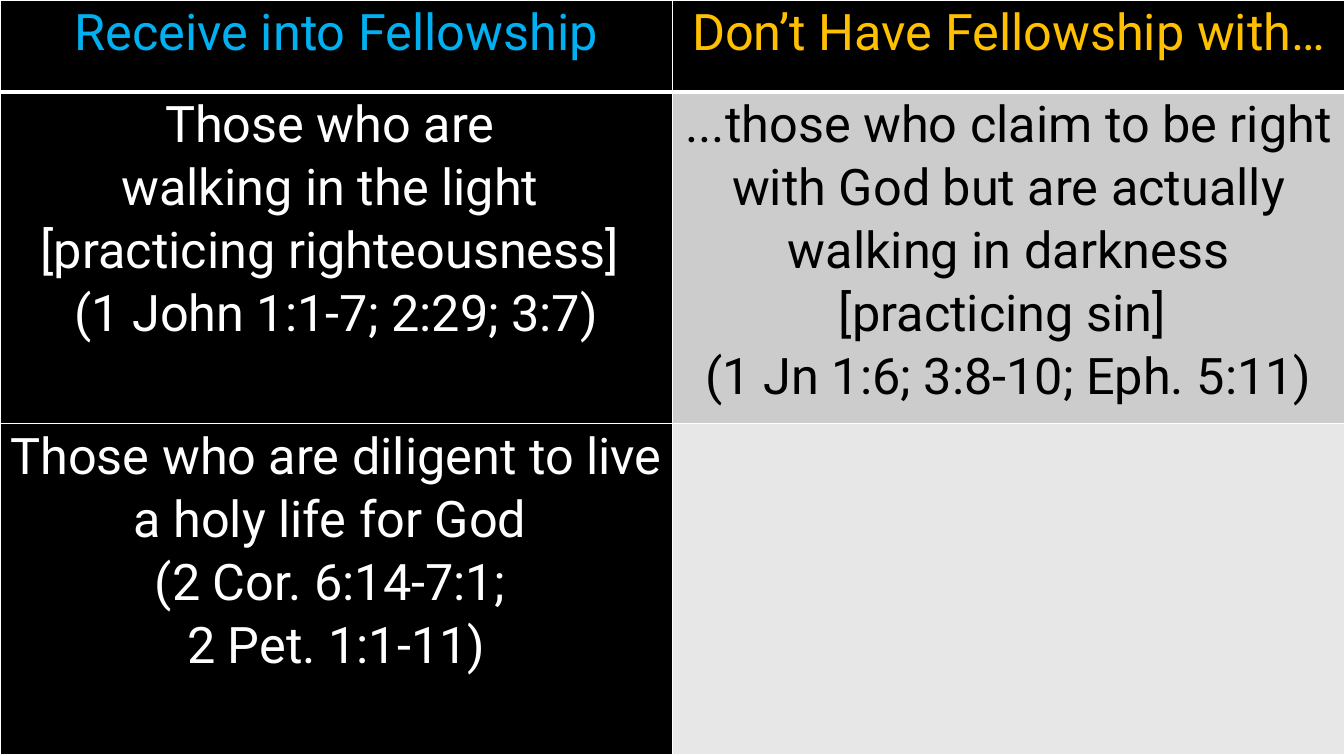
from pptx import Presentation
from pptx.dml.color import RGBColor
from pptx.enum.text import PP_ALIGN
from pptx.oxml import parse_xml
from pptx.oxml.ns import nsdecls
from pptx.util import Inches, Pt

WHITE, BLACK = "FFFFFF", "000000"
HEIGHTS = [0.91, 3.29, 3.29]
ROWS = [
    [("Receive into Fellowship", "00B0F0", BLACK),
     ("Don’t Have Fellowship with…", "FFC000", BLACK)],
    [("Those who are \nwalking in the light \n[practicing righteousness] \n"
      "(1 John 1:1-7; 2:29; 3:7)", WHITE, BLACK),
     ("...those who claim to be right with God but are actually "
      "walking in darkness [practicing sin] \n"
      "(1 Jn 1:6; 3:8-10; Eph. 5:11)", BLACK, "CCCCCC")],
    [("Those who are diligent to live a holy life for God \n"
      "(2 Cor. 6:14-7:1; \n2 Pet. 1:1-11)", WHITE, BLACK),
     ("", BLACK, "E7E7E7")],
]


def paint(fill, color):
    fill.solid()
    fill.fore_color.rgb = RGBColor.from_string(color)


def write(frame, text, size=36, font="Roboto", color=WHITE, space=1.07):
    for num, line in enumerate(text.split("\n")):
        para = frame.add_paragraph() if num else frame.paragraphs[0]
        para.alignment = PP_ALIGN.CENTER
        para.line_spacing = space
        if line:
            run = para.add_run()
            run.text = line
            run.font.size = Pt(size)
            run.font.name = font
            paint(run.font.fill, color)


def edge(cell, sides):
    props = cell._tc.get_or_add_tcPr()
    for num, (side, width) in enumerate(sides.items()):
        props.insert(num, parse_xml(
            f'<a:ln{side} {nsdecls("a")} w="{Pt(width)}"><a:solidFill>'
            f'<a:srgbClr val="{WHITE}"/></a:solidFill></a:ln{side}>'))


def grid(slide):
    table = slide.shapes.add_table(
        len(ROWS), 2, 0, 0, Inches(13.33), Inches(7.5)).table
    for col in table.columns:
        col.width = Inches(6.67)
    for row, (height, items) in enumerate(zip(HEIGHTS, ROWS)):
        table.rows[row].height = Inches(height)
        for col, (text, color, back) in enumerate(items):
            cell = table.cell(row, col)
            cell.margin_left = cell.margin_right = Inches(0.07)
            cell.margin_top = cell.margin_bottom = 0
            paint(cell.fill, back)
            write(cell.text_frame, text, color=color)
            edge(cell, {"L": 1, "R": 1, "T": 3 if row == 1 else 1,
                        "B": 3 if row == 0 else 1})


def main():
    deck = Presentation()
    deck.slide_width, deck.slide_height = Inches(13.33), Inches(7.5)
    slide = deck.slides.add_slide(deck.slide_layouts[6])
    paint(slide.background.fill, BLACK)
    grid(slide)
    deck.save("out.pptx")


if __name__ == "__main__":
    main()
